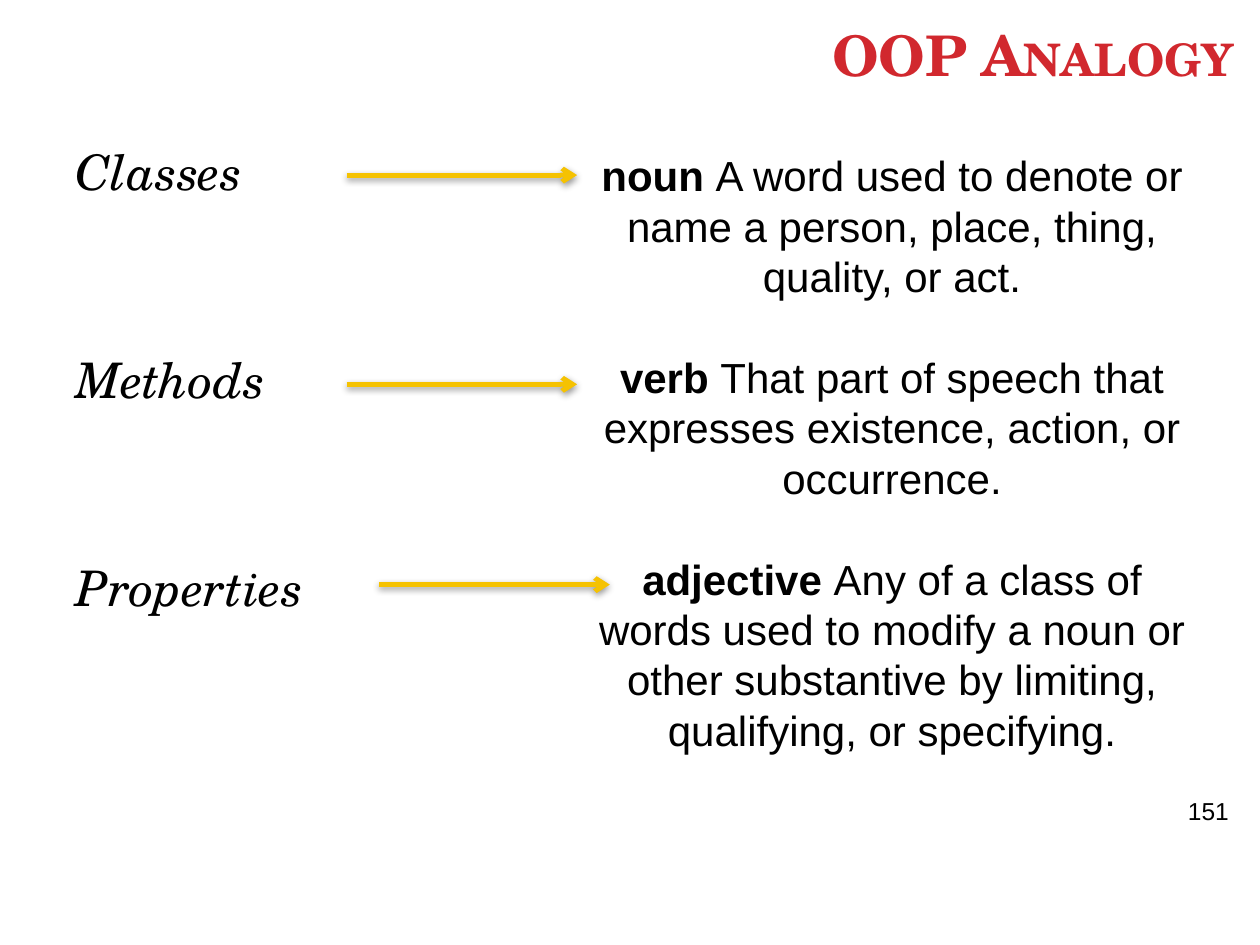
from pptx import Presentation
from pptx import util as u
from pptx.dml.color import RGBColor
from pptx.enum import shapes, text
from pptx.oxml import parse_xml
from pptx.oxml.ns import nsdecls

HUES = {"red": "D1282E", "gold": "F5C201", "ink": "000000"}
SERIF, SANS = "TeX Gyre Schola", "Arial"
SHADE = (
    f'<a:effectLst {nsdecls("a")}>'
    '<a:outerShdw blurRad="50800" dist="20320" dir="5400000" rotWithShape="0">'
    f'<a:srgbClr val="{HUES["ink"]}"><a:alpha val="42000"/></a:srgbClr>'
    '</a:outerShdw></a:effectLst>'
)


def write(para, words, font=SANS, size=24, hue="ink", bold=False,
          slant=False, small=False):
    run = para.add_run()
    run.text = words
    face = run.font
    face.name, face.size = font, u.Pt(size)
    face.bold, face.italic = bold, slant
    face.color.rgb = RGBColor.from_string(HUES[hue])
    if small:
        run._r.get_or_add_rPr().set("cap", "small")


class Page:
    def __init__(self, deck):
        self.slide = deck.slides.add_slide(deck.slide_layouts[1])

    def place(self, shape, box, anchor=text.MSO_ANCHOR.TOP):
        shape.left, shape.top, shape.width, shape.height = map(u.Inches, box)
        frame = shape.text_frame
        frame.word_wrap = True
        frame.auto_size = text.MSO_AUTO_SIZE.NONE
        frame.vertical_anchor = anchor
        return frame

    def paras(self, frame, items):
        for i, item in enumerate(items):
            yield i, frame.add_paragraph() if i else frame.paragraphs[0], item

    def title(self, words, box):
        frame = self.place(self.slide.shapes.title, box, text.MSO_ANCHOR.BOTTOM)
        para = frame.paragraphs[0]
        para.alignment = text.PP_ALIGN.RIGHT
        write(para, words, SERIF, 32, "red", bold=True, small=True)

    def terms(self, words, box, gap):
        frame = self.place(self.slide.placeholders[1], box)
        for i, para, word in self.paras(frame, words):
            para.space_before = u.Pt(gap if i else 6)
            props = para._p.get_or_add_pPr()
            props.set("marL", "0")
            props.set("indent", "0")
            props.append(parse_xml(f'<a:buNone {nsdecls("a")}/>'))
            write(para, word, SERIF, 28, slant=True)

    def box(self, box):
        return self.place(self.slide.shapes.add_textbox(0, 0, 0, 0), box)

    def senses(self, pairs, box, pitch):
        for i, para, (kind, sense) in self.paras(self.box(box), pairs):
            para.alignment = text.PP_ALIGN.CENTER
            para.line_spacing = u.Pt(pitch)
            para.space_before = u.Pt(pitch if i else 0)
            write(para, kind + " ", bold=True)
            write(para, sense)

    def number(self, words, box):
        write(self.box(box).paragraphs[0], words, size=14)

    def arrow(self, left, top, width):
        line = self.slide.shapes.add_connector(
            shapes.MSO_CONNECTOR.STRAIGHT, u.Inches(left), u.Inches(top),
            u.Inches(left + width), u.Inches(top))
        line.line.color.rgb = RGBColor.from_string(HUES["gold"])
        line.line.width = u.Pt(2.75)
        line.line._get_or_add_ln().append(
            parse_xml(f'<a:tailEnd {nsdecls("a")} type="arrow"/>'))
        line._element.spPr.append(parse_xml(SHADE))


def main():
    deck = Presentation()
    deck.slide_width, deck.slide_height = u.Inches(10), u.Inches(7.5)
    page = Page(deck)
    page.title("OOP Analogy", (0.17, 0.14, 9.72, 0.61))
    page.terms(["Classes", "Methods", "Properties"],
               (0.5, 1.07, 8.28, 6.01), gap=85.4)
    page.number("151", (9.33, 6.27, 0.67, 0.57))
    page.senses([
        ("noun", "A word used to denote or name a person, place, thing, "
                 "quality, or act."),
        ("verb", "That part of speech that expresses existence, action, "
                 "or occurrence."),
        ("adjective", "Any of a class of words used to modify a noun or other "
                      "substantive by limiting, qualifying, or specifying."),
    ], (4.58, 1.14, 5, 4.95), pitch=28.8)
    for left, top in [(2.75, 1.39), (2.75, 3.05), (3.01, 4.64)]:
        page.arrow(left, top, 1.83)
    deck.save("out.pptx")


if __name__ == "__main__":
    main()
